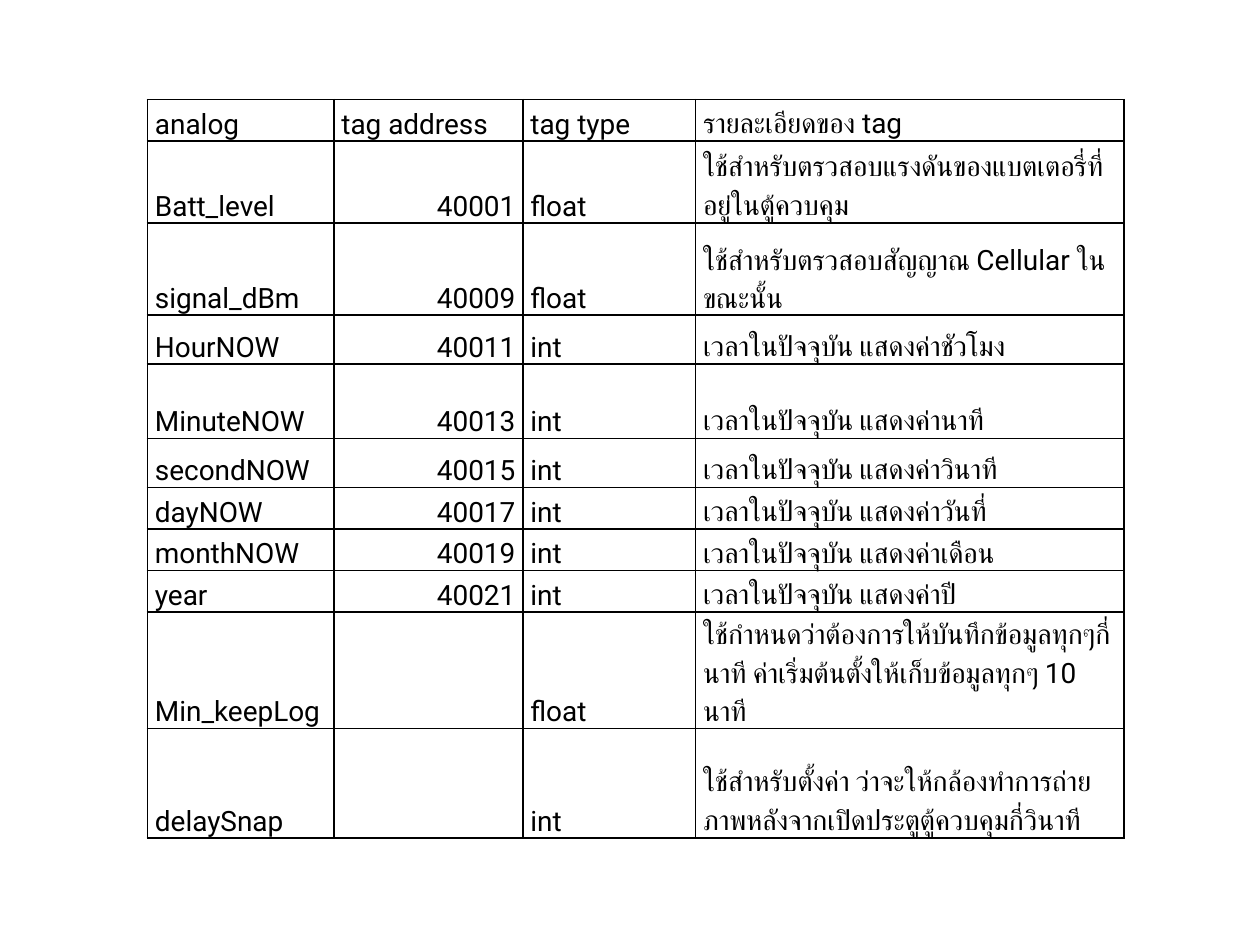
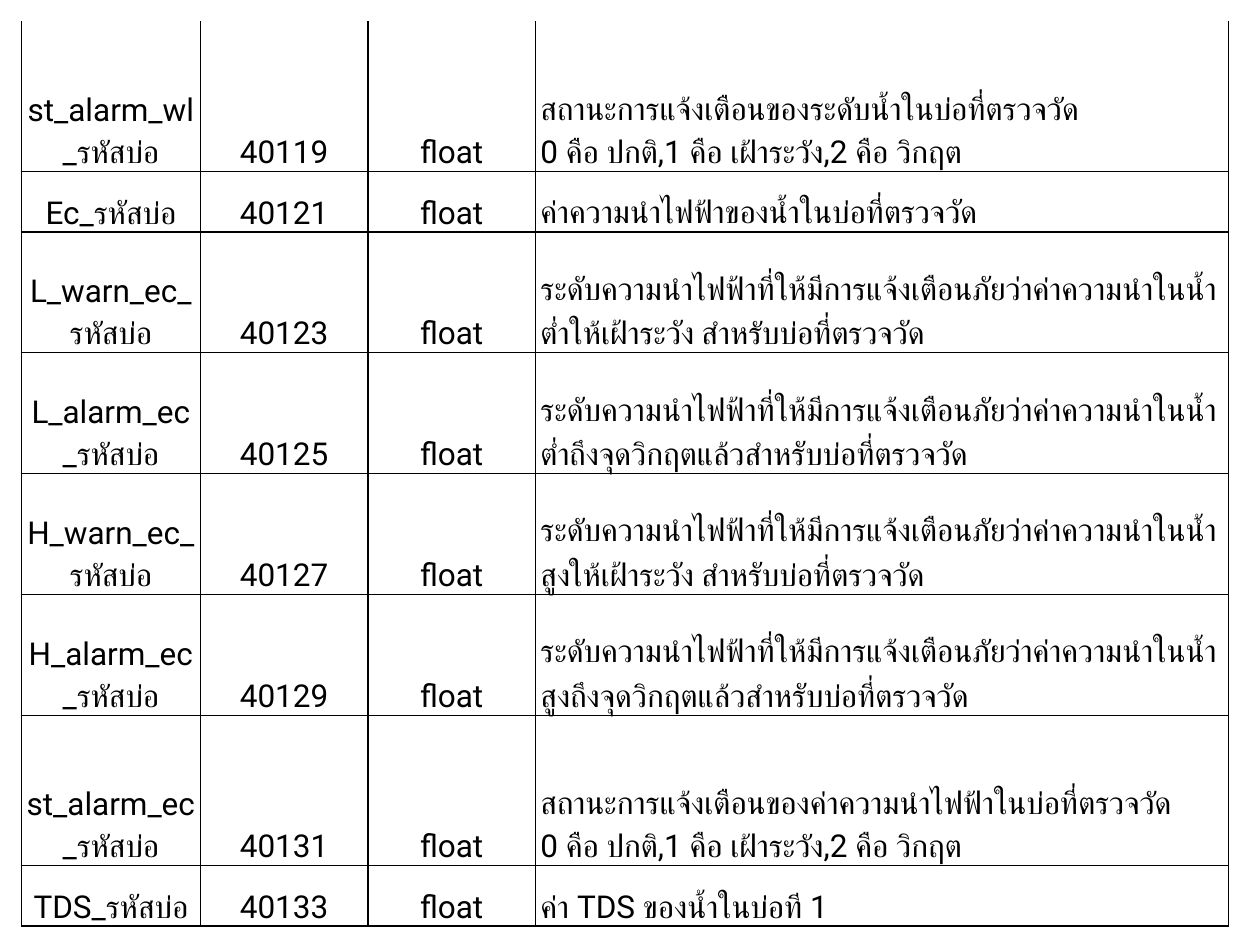
from lxml import etree
from pptx import Presentation
from pptx.dml.color import RGBColor
from pptx.enum import text
from pptx.oxml import ns
from pptx.util import Inches, Pt

COLORS = {"ink": "000000"}
LATIN, THAI = "Roboto", "Calibri"
LEFT, CENTER, RIGHT = text.PP_ALIGN.LEFT, text.PP_ALIGN.CENTER, text.PP_ALIGN.RIGHT


def draw_borders(cell, open_top):
    """Rule every side of a cell, leaving the top open on request."""
    props = cell._tc.get_or_add_tcPr()
    for side in ("lnL", "lnR", "lnT", "lnB"):
        line = etree.SubElement(props, ns.qn("a:" + side), w=str(Pt(1)))
        if side == "lnT" and open_top:
            etree.SubElement(line, ns.qn("a:noFill"))
        else:
            fill = etree.SubElement(line, ns.qn("a:solidFill"))
            etree.SubElement(fill, ns.qn("a:srgbClr"), val=COLORS["ink"])


def write_cell(cell, content, size, align):
    """Each line is a paragraph; a bar splits the Thai font from the Latin one."""
    for number, line in enumerate(content.split("\n")):
        frame = cell.text_frame
        paragraph = frame.add_paragraph() if number else frame.paragraphs[0]
        paragraph.alignment = align
        paragraph.line_spacing = 1.15
        thai, bar, latin = line.partition("|")
        parts = [(thai, THAI), (latin, LATIN)] if bar else [(line, LATIN)]
        for words, font_name in parts:
            if not words:
                continue
            run = paragraph.add_run()
            run.text = words
            run.font.size = Pt(size)
            run.font.name = font_name
            run.font.color.rgb = RGBColor.from_string(COLORS["ink"])
            etree.SubElement(run._r.get_or_add_rPr(), ns.qn("a:cs"), typeface=font_name)


# Tags of the control cabinet
now = "เวลาในปัจจุบัน แสดงค่า"
cabinet_tags = [
    ("analog", "tag address", "tag type", "รายละเอียดของ| tag"),
    ("Batt_level", "40001", "float", "ใช้สำหรับตรวสอบแรงดันของแบตเตอรี่ที่อยู่ในตู้ควบคุม|"),
    ("signal_dBm", "40009", "float", "ใช้สำหรับตรวสอบสัญญาณ |Cellular ในขณะนั้น"),
    ("HourNOW", "40011", "int", now + "ชัวโมง|"),
    ("MinuteNOW", "40013", "int", now + "นาที|"),
    ("secondNOW", "40015", "int", now + "วินาที|"),
    ("dayNOW", "40017", "int", now + "วันที่|"),
    ("monthNOW", "40019", "int", now + "เดือน|"),
    ("year", "40021", "int", now + "ปี|"),
    ("Min_keepLog", "", "float",
     "ใช้กำหนดว่าต้องการให้บันทึกข้อมูลทุกๆกี่นาที ค่าเริ่มต้นตั้งให้เก็บข้อมูลทุกๆ |10 นาที"),
    ("delaySnap", "", "int",
     "ใช้สำหรับตั้งค่า ว่าจะให้กล้องทำการถ่ายภาพหลังจากเปิดประตูตู้ควบคุมกี่วินาที|"),
]

# Tags of a well: addresses run upwards in twos
measured = "|ตรวจวัด"
levels = measured + "\n0 คือ ปกติ,1 คือ เฝ้าระวัง,2 คือ วิกฤต"
warning = "ระดับความนำไฟฟ้าที่ให้มีการแจ้งเตือนภัยว่าค่าความนำในน้ำ"
watch = "ให้เฝ้าระวัง สำหรับบ่อที่" + measured
critical = "ถึงจุดวิกฤตแล้วสำหรับบ่อที่" + measured
well_details = [
    ("st_alarm_wl", "สถานะการแจ้งเตือนของระดับน้ำในบ่อที่" + levels),
    ("Ec", "ค่าความนำไฟฟ้าของน้ำในบ่อที่" + measured),
    ("L_warn_ec", warning + "ต่ำ" + watch),
    ("L_alarm_ec", warning + "ต่ำ" + critical),
    ("H_warn_ec", warning + "สูง" + watch),
    ("H_alarm_ec", warning + "สูง" + critical),
    ("st_alarm_ec", "สถานะการแจ้งเตือนของค่าความนำไฟฟ้าในบ่อที่" + levels),
    ("TDS", "ค่า TDS ของน้ำในบ่อที 1"),
]
well_tags = [(f"{tag}_รหัสบ่อ", str(40119 + 2 * i), "float", detail)
             for i, (tag, detail) in enumerate(well_details)]

pages = [
    dict(tags=cabinet_tags, left=1.17, top=0.79, size=16, inset=0.06, open_top=False,
         widths=[1.48, 1.5, 1.37, 3.4], aligns=[LEFT, RIGHT, LEFT, LEFT],
         heights=[0.33, 0.65, 0.73, 0.39, 0.59, 0.39, 0.33, 0.33, 0.33, 0.87, 0.87]),
    dict(tags=well_tags, left=0.17, top=0.17, size=18, inset=0.04, open_top=True,
         widths=[1.42, 1.33, 1.33, 5.5], aligns=[CENTER, CENTER, CENTER, LEFT],
         heights=[1.19, 0.48, 0.96, 0.96, 0.96, 0.96, 1.19, 0.48]),
]

deck = Presentation()
deck.slide_width, deck.slide_height = Inches(10), Inches(7.5)

# One tag table per slide
for page in pages:
    slide = deck.slides.add_slide(deck.slide_layouts[6])
    widths, heights = page["widths"], page["heights"]
    tag_table = slide.shapes.add_table(
        len(heights), len(widths), Inches(page["left"]), Inches(page["top"]),
        Inches(sum(widths)), Inches(sum(heights))).table
    tag_table.first_row = tag_table.horz_banding = False
    for column, width in zip(tag_table.columns, widths):
        column.width = Inches(width)
    for row, height in zip(tag_table.rows, heights):
        row.height = Inches(height)

    for r, tag in enumerate(page["tags"]):
        for c, content in enumerate(tag):
            cell = tag_table.cell(r, c)
            cell.vertical_anchor = text.MSO_ANCHOR.BOTTOM
            cell.margin_left = cell.margin_right = Inches(page["inset"])
            cell.margin_top = cell.margin_bottom = 0
            draw_borders(cell, page["open_top"] and r == 0)
            cell.fill.background()
            align = page["aligns"][c] if content != "tag address" else LEFT
            write_cell(cell, content, page["size"], align)

deck.save("out.pptx")
